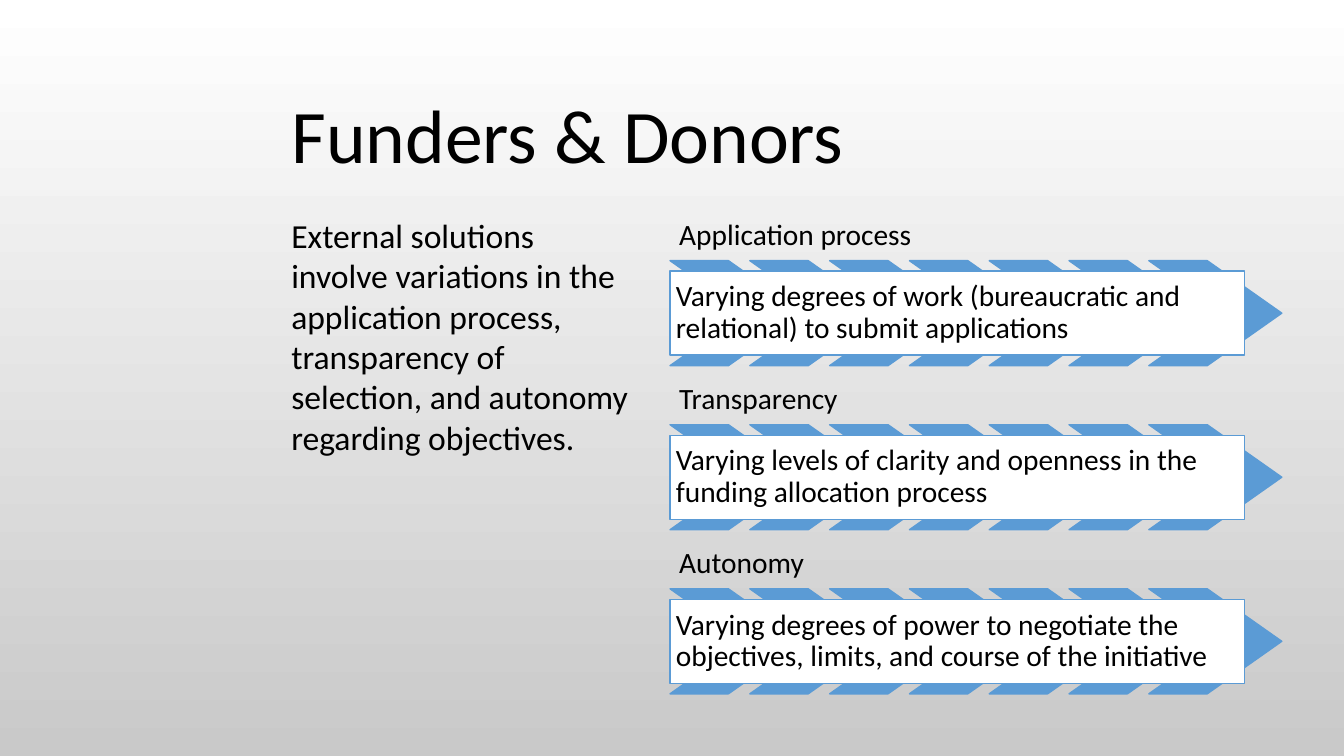
import pptx
import pptx.util
import pptx.dml.color
import pptx.enum.shapes
import pptx.enum.text
from dataclasses import dataclass

Pt = pptx.util.Pt
RGB = pptx.dml.color.RGBColor.from_string
SHAPE = pptx.enum.shapes.MSO_SHAPE
ANCHOR = pptx.enum.text.MSO_ANCHOR
ALIGN = pptx.enum.text.PP_ALIGN
FIT = pptx.enum.text.MSO_AUTO_SIZE


@dataclass(frozen=True)
class Theme:
    font: str = "Calibri"
    ink: str = "000000"
    blue: str = "5B9BD5"
    white: str = "FFFFFF"
    grey: str = "C9C9C9"
    title: float = 54
    body: float = 24
    item: float = 21


THEME = Theme()
ITEMS = [
    ("Application process",
     "Varying degrees of work (bureaucratic and relational) to submit applications"),
    ("Transparency",
     "Varying levels of clarity and openness in the funding allocation process"),
    ("Autonomy",
     "Varying degrees of power to negotiate the objectives, limits, "
     "and course of the initiative"),
]


def write(shape, text, size, anchor=ANCHOR.TOP, inset=None, space=1.0):
    """Fill a shape with one left-aligned run; inset applies to all sides."""
    frame = shape.text_frame
    frame.word_wrap = True
    frame.vertical_anchor = anchor
    if inset is not None:
        frame.margin_left = frame.margin_right = Pt(inset)
        frame.margin_top = frame.margin_bottom = Pt(inset)
    para = frame.paragraphs[0]
    para.alignment = ALIGN.LEFT
    para.line_spacing = space
    run = para.add_run()
    run.text = text
    run.font.name = THEME.font
    run.font.size = Pt(size)
    run.font.color.rgb = RGB(THEME.ink)
    return frame


def textbox(slide, x, y, w, h):
    return slide.shapes.add_textbox(Pt(x), Pt(y), Pt(w), Pt(h))


def block(slide, kind, x, y, w, h, fill):
    """Add a preset shape with a thin blue outline."""
    shape = slide.shapes.add_shape(kind, Pt(x), Pt(y), Pt(w), Pt(h))
    shape.shadow.inherit = False
    shape.fill.solid()
    shape.fill.fore_color.rgb = RGB(fill)
    shape.line.color.rgb = RGB(THEME.blue)
    shape.line.width = Pt(1)
    return shape


def backdrop(slide):
    fill = slide.background.fill
    fill.gradient()
    fill.gradient_angle = 270
    for stop, color in zip(fill.gradient_stops, (THEME.white, THEME.grey)):
        stop.color.rgb = RGB(color)


def prose(slide, x, y, w, h, text, size):
    frame = write(textbox(slide, x, y, w, h), text, size)
    frame.auto_size = FIT.SHAPE_TO_FIT_TEXT


def row(slide, x, y, w, label, text):
    """Place a label above a card that lies on a band of chevrons."""
    head, band, count, wide = 37, 75, 7, 95
    write(textbox(slide, x, y, w - 5, head), label, THEME.item,
          ANCHOR.BOTTOM, 6.6, 0.9)
    top = y + head
    step = 57
    for i in range(count):
        arrow = block(slide, SHAPE.CHEVRON, x + i * step, top, wide, band,
                      THEME.blue)
        arrow.adjustments[0] = 0.71
    card = block(slide, SHAPE.RECTANGLE, x, top + 7.5, w, band - 15,
                 THEME.white)
    write(card, text, THEME.item, ANCHOR.MIDDLE, 4.2, 0.9)


def panel(slide, x, y, w, h):
    """Stack the rows at an equal pitch down the box."""
    pitch = h / len(ITEMS)
    for i, (label, text) in enumerate(ITEMS):
        row(slide, x, y + i * pitch, w, label, text)


def main():
    deck = pptx.Presentation()
    deck.slide_width, deck.slide_height = Pt(960), Pt(540)
    slide = deck.slides.add_slide(deck.slide_layouts[6])
    backdrop(slide)
    prose(slide, 201, 150, 260.5, 181.5,
          "External solutions involve variations in the application process, "
          "transparency of selection, and autonomy regarding objectives.",
          THEME.body)
    prose(slide, 201, 59, 527, 72.7, "Funders & Donors", THEME.title)
    panel(slide, 478.6, 149.2, 410.4, 351.6)
    deck.save("out.pptx")


if __name__ == "__main__":
    main()
